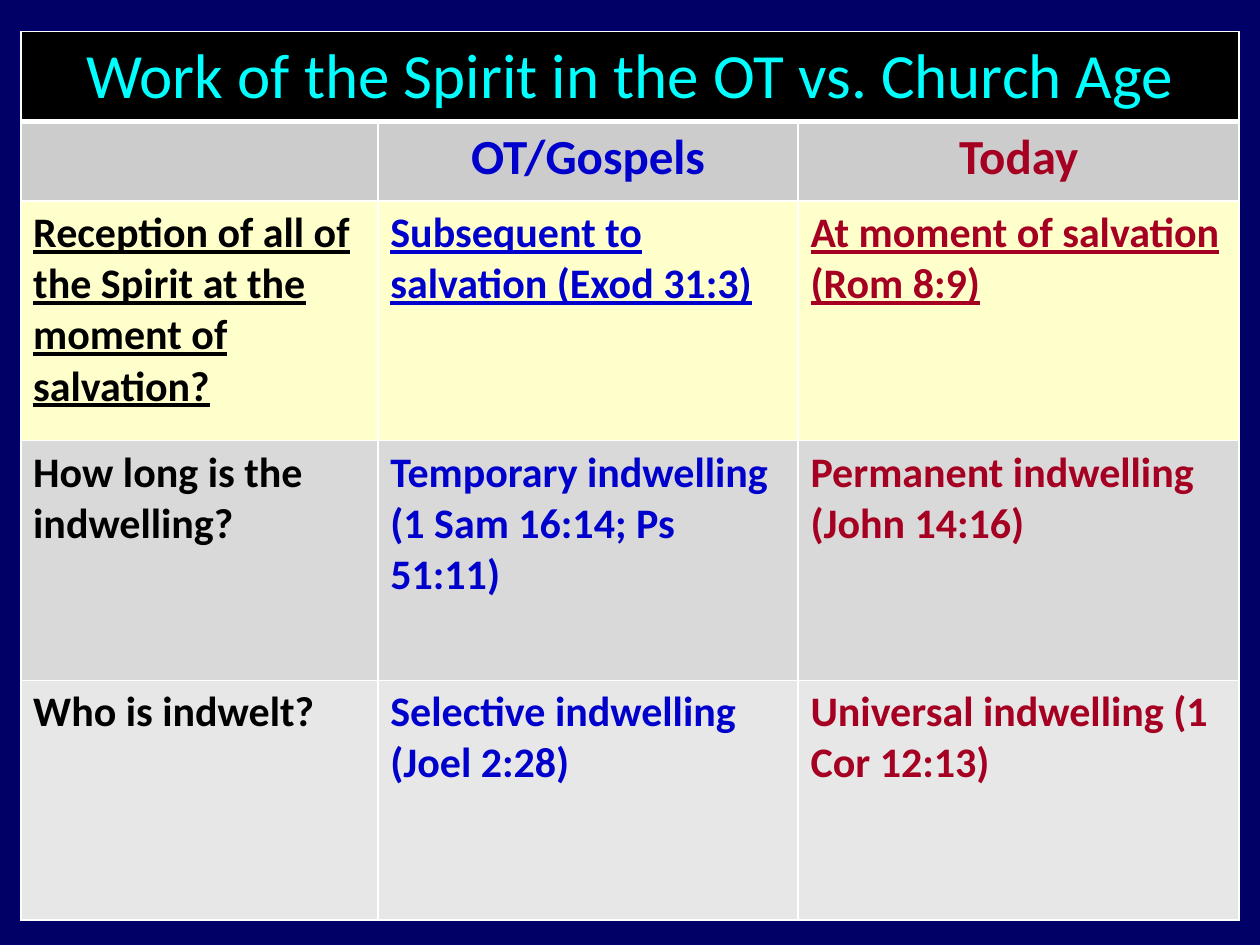
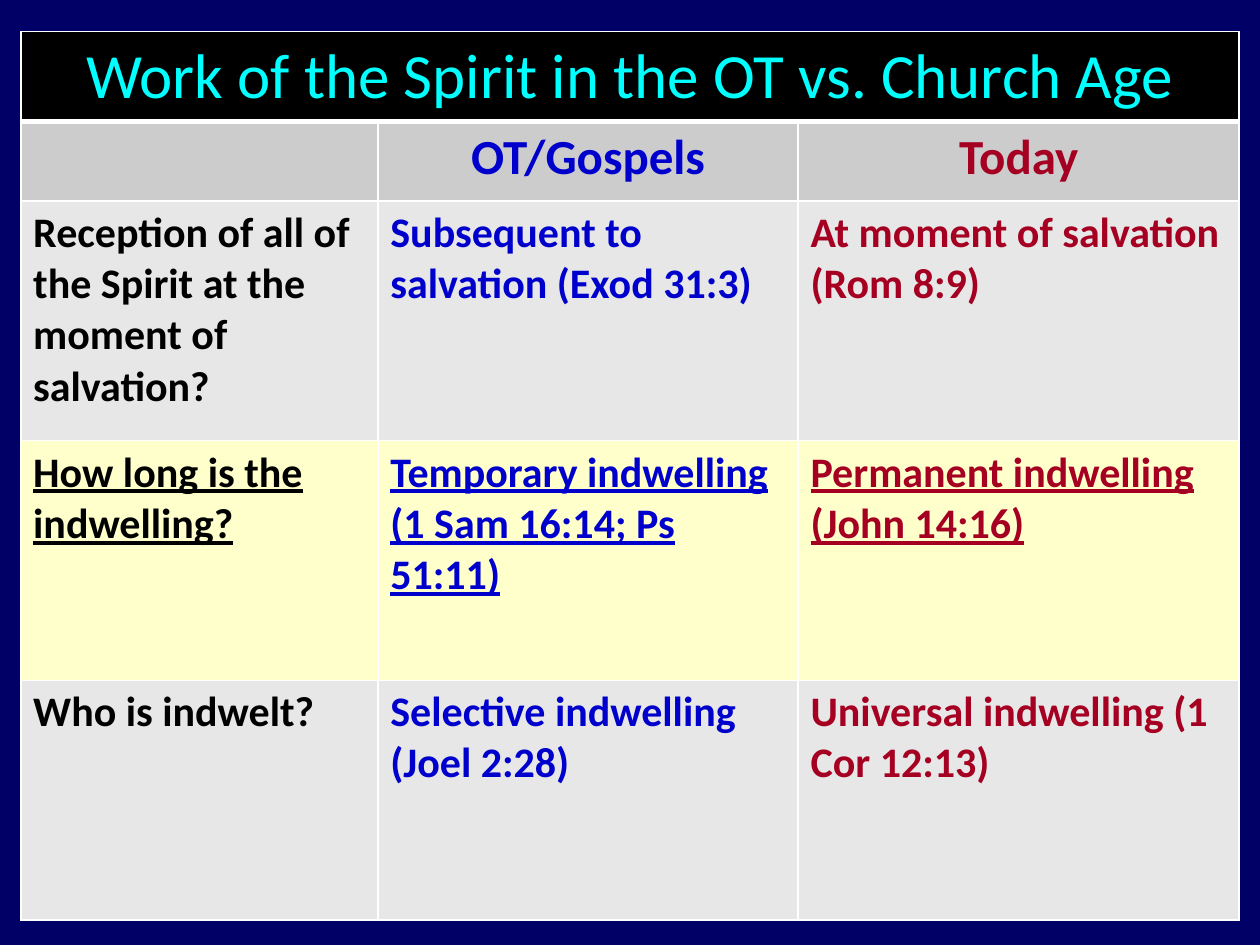
from dataclasses import dataclass

from lxml import etree
from pptx import Presentation
from pptx.dml.color import RGBColor
from pptx.enum import text
from pptx.oxml import ns
from pptx.util import Cm, Pt


@dataclass(frozen=True)
class Theme:
    """Colours, font and type sizes shared by the slides."""

    font: str = "Calibri"
    backdrop: str = "000066"
    title_fill: str = "000000"
    title_ink: str = "00FFFF"
    heading_fill: str = "CCCCCC"
    highlight: str = "FFFFCC"
    plain: str = "E7E7E7"
    shaded: str = "D9D9D9"
    border: str = "FFFFFF"
    inks: tuple = ("000000", "0000CC", "A50021")
    title_size: int = 36
    heading_size: int = 28
    body_size: int = 24


THEME = Theme()
TABLE_BOX = (0.42, 0.64, 24.56, 17.87)
COLUMN_WIDTHS = (7.2, 8.47, 8.89)
TITLE_HEIGHT, HEADING_HEIGHT = 1.78, 1.6
TITLE = "Work of the Spirit in the OT vs. Church Age"
HEADINGS = ("", "OT/Gospels", "Today")
COMPARISONS = (
    ("Reception of all of the Spirit at the moment of salvation?",
     "Subsequent to salvation (Exod 31:3)",
     "At moment of salvation (Rom 8:9)"),
    ("How long is the indwelling?",
     "Temporary indwelling (1 Sam 16:14; Ps 51:11)",
     "Permanent indwelling (John 14:16)"),
    ("Who is indwelt?",
     "Selective indwelling (Joel 2:28)",
     "Universal indwelling (1 Cor 12:13)"),
)
SLIDE_ROW_FILLS = (
    (THEME.highlight, THEME.shaded, THEME.plain),
    (THEME.plain, THEME.highlight, THEME.plain),
)


def style_cell(cell, fill, top=1, bottom=1):
    """Give a cell its margins, borders and fill."""
    cell.margin_left = cell.margin_right = Cm(0.25)
    cell.margin_top = cell.margin_bottom = Cm(0.13)
    properties = cell._tc.get_or_add_tcPr()
    for side, width in (("L", 1), ("R", 1), ("T", top), ("B", bottom)):
        line = etree.SubElement(properties, ns.qn(f"a:ln{side}"), w=str(Pt(width)))
        solid = etree.SubElement(line, ns.qn("a:solidFill"))
        etree.SubElement(solid, ns.qn("a:srgbClr"), val=THEME.border)
    cell.fill.solid()
    cell.fill.fore_color.rgb = RGBColor.from_string(fill)


def write(cell, words, size, ink, bold=True, underline=False, centred=False):
    """Write one styled run into a cell."""
    para = cell.text_frame.paragraphs[0]
    para.alignment = text.PP_ALIGN.CENTER if centred else text.PP_ALIGN.LEFT
    span = para.add_run()
    span.text = words
    span.font.name = THEME.font
    span.font.size = Pt(size)
    span.font.bold = bold
    span.font.underline = underline
    span.font.color.rgb = RGBColor.from_string(ink)


def fill_title_row(table):
    """Merge the top row into the title band."""
    cells = list(table.rows[0].cells)
    cells[0].merge(cells[-1])
    for cell in cells:
        style_cell(cell, THEME.title_fill, bottom=3)
    cells[0].vertical_anchor = text.MSO_ANCHOR.MIDDLE
    write(cells[0], TITLE, THEME.title_size, THEME.title_ink, bold=False, centred=True)


def fill_heading_row(table):
    """Write the column headings below the title band."""
    for cell, words, ink in zip(table.rows[1].cells, HEADINGS, THEME.inks):
        style_cell(cell, THEME.heading_fill, top=3)
        if words:
            write(cell, words, THEME.heading_size, ink, centred=True)


def fill_comparison_row(row, comparison, fill):
    """Write one question and its answers, underlined when highlighted."""
    for cell, words, ink in zip(row.cells, comparison, THEME.inks):
        style_cell(cell, fill)
        write(cell, words, THEME.body_size, ink, underline=fill == THEME.highlight)


def add_comparison_table(page, box, row_fills):
    """Place the comparison table in the given box."""
    height = box[3]
    body_height = (height - TITLE_HEIGHT - HEADING_HEIGHT) / len(COMPARISONS)
    row_heights = [TITLE_HEIGHT, HEADING_HEIGHT] + [body_height] * len(COMPARISONS)
    frame = page.shapes.add_table(len(row_heights), len(COLUMN_WIDTHS), *map(Cm, box))
    table = frame.table
    table.first_row = table.horz_banding = False
    for column, width in zip(table.columns, COLUMN_WIDTHS):
        column.width = Cm(width)
    for row, row_height in zip(table.rows, row_heights):
        row.height = Cm(row_height)
    fill_title_row(table)
    fill_heading_row(table)
    for row, comparison, fill in zip(list(table.rows)[2:], COMPARISONS, row_fills):
        fill_comparison_row(row, comparison, fill)


def add_comparison_slide(deck, row_fills):
    """Add a blank slide with the backdrop and the comparison table."""
    page = deck.slides.add_slide(deck.slide_layouts[6])
    page.background.fill.solid()
    page.background.fill.fore_color.rgb = RGBColor.from_string(THEME.backdrop)
    add_comparison_table(page, TABLE_BOX, row_fills)


def main():
    """Build and save the deck."""
    deck = Presentation()
    deck.slide_width, deck.slide_height = Cm(25.4), Cm(19.05)
    for row_fills in SLIDE_ROW_FILLS:
        add_comparison_slide(deck, row_fills)
    deck.save("out.pptx")


if __name__ == "__main__":
    main()
